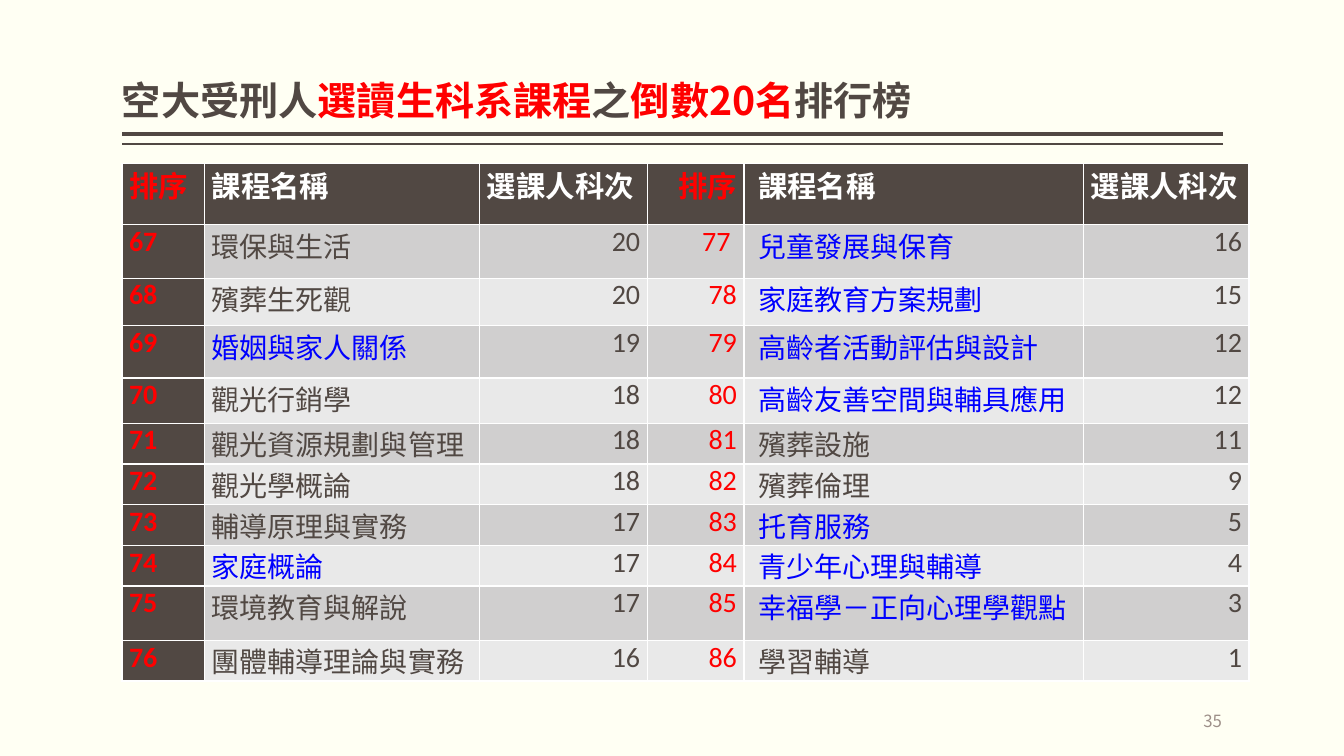
from lxml import etree
from pptx import Presentation
from pptx.dml.color import RGBColor
from pptx.enum.shapes import MSO_CONNECTOR
from pptx.enum.text import MSO_ANCHOR, MSO_AUTO_SIZE, PP_ALIGN
from pptx.oxml.ns import qn
from pptx.util import Emu, Pt

LEFT, RIGHT = PP_ALIGN.LEFT, PP_ALIGN.RIGHT
BOTTOM, MIDDLE = MSO_ANCHOR.BOTTOM, MSO_ANCHOR.MIDDLE
STRAIGHT = MSO_CONNECTOR.STRAIGHT
NO_AUTOFIT = MSO_AUTO_SIZE.NONE
PX = 9144
CJK_FONT = "Noto Sans CJK TC"
BROWN, RED, BLUE, WHITE = "514843", "FF0000", "0000FF", "FFFFFF"
BANDS = ["D0CFCF", "E9E9E9"]


def color(hex_value):
    return RGBColor.from_string(hex_value)


def set_font(font, latin, size, hex_value, bold=False):
    font.name = latin
    font.size = Pt(size)
    font.bold = bold
    font.color.rgb = color(hex_value)
    etree.SubElement(font._element, qn("a:ea")).set("typeface", CJK_FONT)


deck = Presentation()
deck.slide_width, deck.slide_height = Emu(1333 * PX), Emu(750 * PX)
slide = deck.slides.add_slide(deck.slide_layouts[5])
slide.background.fill.solid()
slide.background.fill.fore_color.rgb = color("FFFFF3")

for rule_y, weight in [(133, 3), (143, 1)]:
    rule = slide.shapes.add_connector(
        STRAIGHT, 1213 * PX, rule_y * PX, 121 * PX, rule_y * PX)
    rule.line.color.rgb = color(BROWN)
    rule.line.width = Pt(weight)
    etree.SubElement(rule._element.spPr, qn("a:effectLst"))

title = slide.shapes.title
title.left, title.top, title.width, title.height = (
    Emu(n * PX) for n in (121, 8, 1092, 120))
heading = title.text_frame
heading.auto_size = NO_AUTOFIT
heading.word_wrap = True
heading.vertical_anchor = BOTTOM
heading.margin_left = heading.margin_right = 0
heading.margin_top = heading.margin_bottom = Emu(5 * PX)
heading_line = heading.paragraphs[0]
heading_line.alignment = LEFT
heading_line.line_spacing = 0.9
for words, words_color in [
    ("空大受刑人", BROWN), ("選讀生科系課程", RED), ("之", BROWN),
    ("倒數20名", RED), ("排行榜", BROWN),
]:
    run = heading_line.add_run()
    run.text = words
    set_font(run.font, CJK_FONT, 28, words_color, True)

headers = ["排序", "課程名稱", "選課人科次"] * 2
courses = [
    ("67", "環保與生活", "20", "77 ", "兒童發展與保育", "16"),
    ("68", "殯葬生死觀", "20", "78", "家庭教育方案規劃", "15"),
    ("69", "婚姻與家人關係", "19", "79", "高齡者活動評估與設計", "12"),
    ("70", "觀光行銷學", "18", "80", "高齡友善空間與輔具應用", "12"),
    ("71", "觀光資源規劃與管理", "18", "81", "殯葬設施", "11"),
    ("72", "觀光學概論", "18", "82", "殯葬倫理", "9"),
    ("73", "輔導原理與實務", "17", "83", "托育服務", "5"),
    ("74", "家庭概論", "17", "84", "青少年心理與輔導", "4"),
    ("75", "環境教育與解說", "17", "85", "幸福學－正向心理學觀點", "3"),
    ("76", "團體輔導理論與實務", "16", "86", "學習輔導", "1"),
]
highlighted = {
    "婚姻與家人關係", "家庭概論", "兒童發展與保育", "家庭教育方案規劃",
    "高齡者活動評估與設計", "高齡友善空間與輔具應用", "托育服務",
    "青少年心理與輔導", "幸福學－正向心理學觀點",
}
column_widths = [82, 273, 166, 96, 337, 164]
row_heights = [61, 53, 47, 52, 45, 37, 37, 37, 37, 54, 37]
ranking = slide.shapes.add_table(
    len(row_heights), len(column_widths), 121 * PX, 162 * PX,
    sum(column_widths) * PX, sum(row_heights) * PX).table
ranking.first_col = True
for column, width in zip(ranking.columns, column_widths):
    column.width = Emu(width * PX)
for row, height in zip(ranking.rows, row_heights):
    row.height = Emu(height * PX)

for r, values in enumerate([headers, *courses]):
    for c, value in enumerate(values):
        is_header = r == 0
        is_dark = is_header or c == 0
        if c in (0, 3):
            text_color = RED
        elif is_header:
            text_color = WHITE
        else:
            text_color = BLUE if value in highlighted else BROWN
        cell = ranking.cell(r, c)
        cell.text = value
        cell.fill.solid()
        cell.fill.fore_color.rgb = color(BROWN if is_dark else BANDS[(r - 1) % 2])
        cell.margin_left = Emu((14 if c == 4 else 7) * PX)
        cell.margin_right = Emu(7 * PX)
        cell.margin_top = cell.margin_bottom = 0
        entry = cell.text_frame.paragraphs[0]
        is_number = c in (2, 5) and not is_header
        entry.alignment = RIGHT if c == 3 or is_number else LEFT
        set_font(entry.font, "Calibri", 21 if is_header else 20, text_color, is_dark)

page_box = slide.shapes.add_textbox(1012 * PX, 695 * PX, 200 * PX, 40 * PX)
page_frame = page_box.text_frame
page_frame.word_wrap = True
page_frame.vertical_anchor = MIDDLE
page_frame.margin_left = page_frame.margin_right = 0
page_frame.margin_top = page_frame.margin_bottom = Emu(5 * PX)
page_number = page_frame.paragraphs[0]
page_number.text = "35"
page_number.alignment = RIGHT
set_font(page_number.font, CJK_FONT, 12, "9D8F88")

deck.save("out.pptx")
